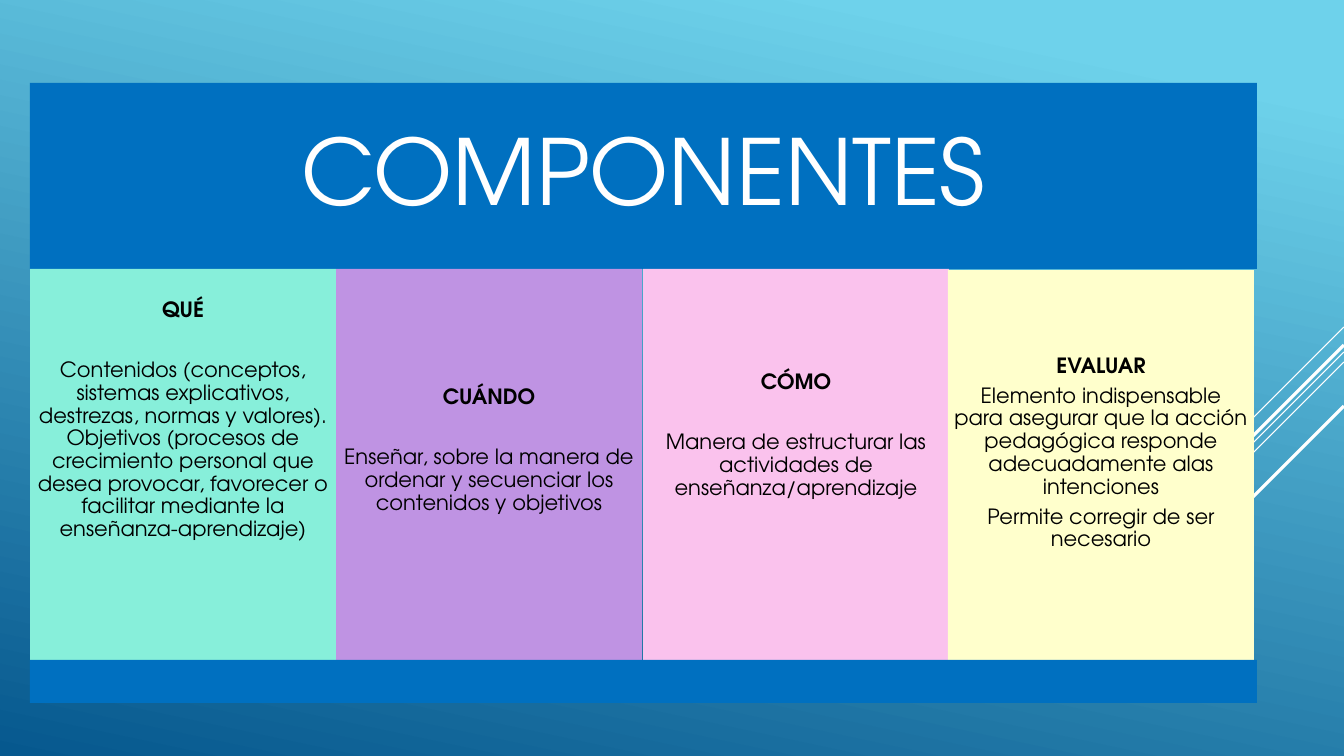
from pptx import Presentation
from pptx.dml.color import RGBColor
from pptx.enum.shapes import MSO_CONNECTOR, MSO_SHAPE
from pptx.enum.text import MSO_ANCHOR, PP_ALIGN
from pptx.oxml.ns import qn
from pptx.util import Pt
from lxml import etree

RECT = MSO_SHAPE.RECTANGLE
STRAIGHT = MSO_CONNECTOR.STRAIGHT
TOP, MIDDLE = MSO_ANCHOR.TOP, MSO_ANCHOR.MIDDLE
CENTER = PP_ALIGN.CENTER

WHITE = RGBColor(0xFF, 0xFF, 0xFF)
BLACK = RGBColor(0x00, 0x00, 0x00)
BLUE = RGBColor(0x00, 0x70, 0xC0)
MINT = RGBColor(0x87, 0xEF, 0xDA)
PURPLE = RGBColor(0xBF, 0x93, 0xE3)
PINK = RGBColor(0xFA, 0xC2, 0xED)
CREAM = RGBColor(0xFF, 0xFF, 0xCC)
SKY = RGBColor(0x6E, 0xD2, 0xEB)
DEEP = RGBColor(0x06, 0x58, 0x8E)

FONT = "TeX Gyre Adventor"
WIDTH, HEIGHT = 1344, 756
LEFT, BAND_W, COL_W = 30, 1227, 306


def px(n):
    """Turn pixels (100.8 to the inch) into EMU."""
    return round(n * 914400 / 100.8)


def write(p, text, size=15, color=BLACK, bold=False, after=5.3):
    p.alignment = CENTER
    p.line_spacing = 0.9
    p.space_after = Pt(after)
    r = p.add_run()
    r.text = text
    r.font.name = FONT
    r.font.size = Pt(size)
    r.font.bold = bold
    r.font.color.rgb = color


class Deck:
    def __init__(self):
        self.prs = Presentation()
        self.prs.slide_width, self.prs.slide_height = px(WIDTH), px(HEIGHT)
        self.s = self.prs.slides.add_slide(self.prs.slide_layouts[6])

    def background(self, start, end):
        fill = self.s.background.fill
        fill.gradient()
        fill.gradient_angle = 258
        for stop, color, position in zip(fill.gradient_stops, (start, end), (0.1, 1)):
            stop.color.rgb = color
            stop.position = position

    def ray(self, y, run, weight):
        """Draw a 45-degree line from the right edge down to the left."""
        line = self.s.shapes.add_connector(
            STRAIGHT, px(WIDTH), px(y), px(WIDTH - run), px(y + run))
        line.line.color.rgb = WHITE
        line.line.width = Pt(weight)
        etree.SubElement(line._element.spPr, qn("a:effectLst"))

    def block(self, x, y, w, h, color, anchor=MIDDLE, inset=6, top=6):
        """Add a plain rectangle and return its text frame."""
        sp = self.s.shapes.add_shape(RECT, px(x), px(y), px(w), px(h))
        sp.shadow.inherit = False
        sp.fill.solid()
        sp.fill.fore_color.rgb = color
        sp.line.fill.background()
        tf = sp.text_frame
        tf.word_wrap = True
        tf.vertical_anchor = anchor
        tf.margin_left = tf.margin_right = tf.margin_bottom = px(inset)
        tf.margin_top = px(top)
        return tf

    def column(self, x, y, h, color, top, heading, gap, *body):
        tf = self.block(x, y, COL_W, h, color, TOP, top=top)
        write(tf.paragraphs[0], heading, bold=True, after=gap)
        for text in body:
            write(tf.add_paragraph(), text)


RAYS = [(327, 101, 0.75), (352, 329, 0.75), (362, 209, 0.75),
        (345, 193, 2.25), (406, 140, 2.25)]

COLUMNS = [
    (30, 269, 391, MINT, 30, "QUÉ", 27,
     "Contenidos (conceptos, sistemas explicativos, destrezas, normas y valores). "
     "Objetivos (procesos de crecimiento personal que desea provocar, favorecer o "
     "facilitar mediante la enseñanza-aprendizaje)"),
    (336, 269, 391, PURPLE, 117, "CUÁNDO", 27,
     "Enseñar, sobre la manera de ordenar y secuenciar los contenidos y objetivos"),
    (643, 269, 391, PINK, 102, "CÓMO", 27,
     "Manera de estructurar las actividades de enseñanza/aprendizaje"),
    (948, 270, 395, CREAM, 85, "EVALUAR", 5.3,
     "Elemento indispensable para asegurar que la acción pedagógica responde "
     "adecuadamente alas intenciones",
     "Permite corregir de ser necesario"),
]


def main():
    deck = Deck()
    deck.background(SKY, DEEP)
    for ray in RAYS:
        deck.ray(*ray)
    title = deck.block(LEFT, 83, BAND_W, 186, BLUE, inset=27, top=27)
    write(title.paragraphs[0], "COMPONENTES", size=65, color=WHITE)
    for column in COLUMNS:
        deck.column(*column)
    deck.block(LEFT, 660, BAND_W, 43, BLUE)
    deck.prs.save("out.pptx")


if __name__ == "__main__":
    main()
